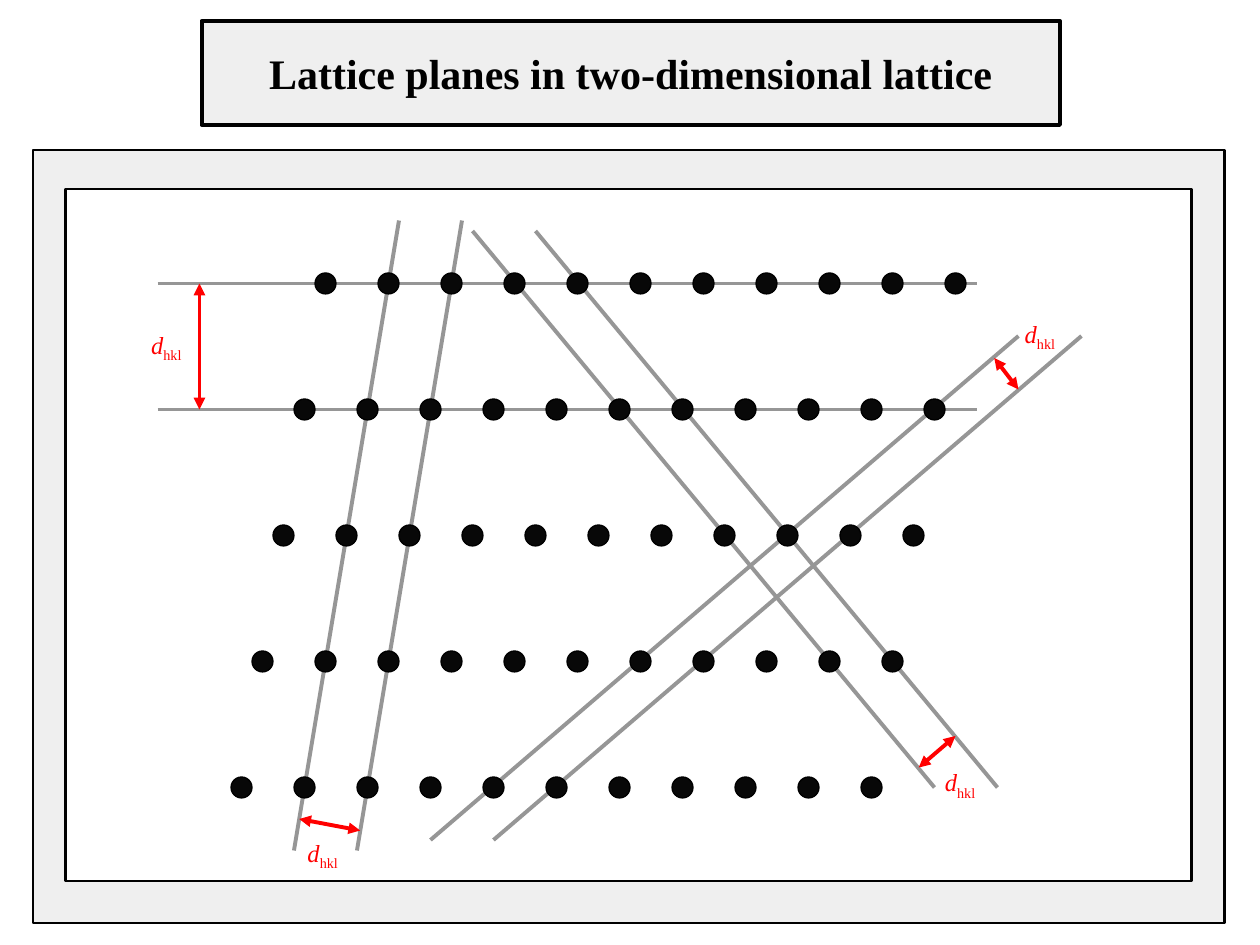
from dataclasses import dataclass

from lxml.etree import SubElement
from pptx import Presentation
from pptx.dml.color import RGBColor
from pptx.enum.shapes import MSO_CONNECTOR as Connector, MSO_SHAPE as Shape
from pptx.enum.text import MSO_ANCHOR as Anchor, PP_ALIGN as Align
from pptx.oxml.ns import qn
from pptx.util import Inches, Pt

COLORS = {
    "panel": "EFEFEF",
    "paper": "FFFFFF",
    "ink": "000000",
    "atom": "080808",
    "plane": "969696",
    "spacing": "FF0000",
}
FONT = "Times New Roman"
WIDTH, HEIGHT = Inches(10), Inches(7.5)
COLUMNS, ROWS = 120, 90
ATOM_ROWS, ATOMS_PER_ROW = 5, 11
ATOM_STEP, ROW_STEP, ROW_SHIFT = 6, 12, -2
FIRST_ATOM = (19, 9)
ATOM_SIZE = 2

PLANE_PAIRS = [
    ((26, 3), (16, 63), (ATOM_STEP, 0)),
    ((77, 57), (33, 4), (ATOM_STEP, 0)),
    ((3, 9), (81, 9), (0, ROW_STEP)),
    ((29, 62), (85, 14), (ATOM_STEP, 0)),
]
SPACINGS = [
    ((16.5, 60), (22.3, 61.1), (16.1, 61.2)),
    ((7, 9), (7, 21), (1.2, 12.8)),
    ((82.7, 16.1), (85, 19.1), (84.4, 11.8)),
    ((75.5, 55.1), (79, 52.1), (76.8, 54.5)),
]


@dataclass
class Box:
    """An area of the slide, in grid columns and rows."""
    left: float
    top: float
    width: float
    height: float

    def at(self, column, row):
        """Return the slide position of a grid point inside the box."""
        return (int((self.left + column) * WIDTH / COLUMNS),
                int((self.top + row) * HEIGHT / ROWS))

    def inner(self, column, row, width, height):
        """Return a box placed relative to this one."""
        return Box(self.left + column, self.top + row, width, height)

    def frame(self):
        """Return left, top, width and height on the slide."""
        return (*self.at(0, 0), int(self.width * WIDTH / COLUMNS),
                int(self.height * HEIGHT / ROWS))


def color(name):
    """Look up a named colour."""
    return RGBColor.from_string(COLORS[name])


def add_figure(shapes, kind, box, fill, weight):
    """Add an outlined, filled shape."""
    figure = shapes.add_shape(kind, *box.frame())
    figure.shadow.inherit = False
    figure.fill.solid()
    figure.fill.fore_color.rgb = color(fill)
    figure.line.color.rgb = color("ink")
    figure.line.width = Pt(weight)
    return figure


def add_stroke(shapes, start, end, tint, arrows=False):
    """Add a straight line, with arrowheads at both ends if asked."""
    stroke = shapes.add_connector(Connector.STRAIGHT, *start, *end)
    stroke.line.color.rgb = color(tint)
    stroke.line.width = Pt(2.25)
    if arrows:
        for tip in ("a:headEnd", "a:tailEnd"):
            SubElement(stroke.line._get_or_add_ln(), qn(tip), type="triangle")
    SubElement(stroke._element.spPr, qn("a:effectLst"))


def write(paragraph, text, size, tint, bold=False, italic=False, baseline=None):
    """Append a formatted run to a paragraph."""
    run = paragraph.add_run()
    run.text = text
    font = run.font
    font.name, font.size, font.bold, font.italic = FONT, Pt(size), bold, italic
    font.color.rgb = color(tint)
    if baseline is not None:
        font._element.set("baseline", str(baseline * 1000))


def draw_title(shapes, box):
    """Draw the framed heading."""
    banner = add_figure(shapes, Shape.RECTANGLE, box, "panel", 2.25)
    banner.text_frame.vertical_anchor = Anchor.MIDDLE
    heading = banner.text_frame.paragraphs[0]
    heading.alignment = Align.CENTER
    write(heading, "Lattice planes in two-dimensional lattice", 24, "ink", bold=True)


def draw_board(shapes, box):
    """Draw the grey mount and the white sheet on it."""
    add_figure(shapes, Shape.RECTANGLE, box, "panel", 1.5)
    sheet = box.inner(3.1, 3.7, box.width - 6.3, box.height - 7.7)
    add_figure(shapes, Shape.RECTANGLE, sheet, "paper", 1.5)


def draw_planes(shapes, box):
    """Draw each lattice plane and its neighbour."""
    for (x1, y1), (x2, y2), (dx, dy) in PLANE_PAIRS:
        for n in range(2):
            add_stroke(shapes, box.at(x1 + n * dx, y1 + n * dy),
                       box.at(x2 + n * dx, y2 + n * dy), "plane")


def draw_spacings(shapes, box):
    """Mark and label the distances between planes."""
    for start, end, corner in SPACINGS:
        add_stroke(shapes, box.at(*start), box.at(*end), "spacing", arrows=True)
        label = shapes.add_textbox(*box.inner(*corner, 5.6, 4).frame())
        label.text_frame.word_wrap = False
        distance = label.text_frame.paragraphs[0]
        write(distance, "d", 14, "spacing", italic=True)
        write(distance, "hkl", 14, "spacing", baseline=-25)


def draw_atoms(shapes, box):
    """Draw the oblique lattice of atoms, one group per row."""
    first_column, first_row = FIRST_ATOM
    for row in range(ATOM_ROWS):
        atoms = shapes.add_group_shape().shapes
        for n in range(ATOMS_PER_ROW):
            column = first_column + n * ATOM_STEP + row * ROW_SHIFT
            spot = box.inner(column - ATOM_SIZE / 2,
                             first_row + row * ROW_STEP - ATOM_SIZE / 2,
                             ATOM_SIZE, ATOM_SIZE)
            add_figure(atoms, Shape.OVAL, spot, "atom", 0.75)


def main():
    """Build and save the slide."""
    deck = Presentation()
    deck.slide_width, deck.slide_height = WIDTH, HEIGHT
    shapes = deck.slides.add_slide(deck.slide_layouts[6]).shapes
    draw_board(shapes, Box(3.15, 14.3, 113.5, 73.6))
    draw_title(shapes, Box(19.2, 2, 81.75, 9.9))
    lattice = Box(12, 18, 96, 66)
    draw_planes(shapes, lattice)
    draw_spacings(shapes, lattice)
    draw_atoms(shapes, lattice)
    deck.save("out.pptx")


if __name__ == "__main__":
    main()
